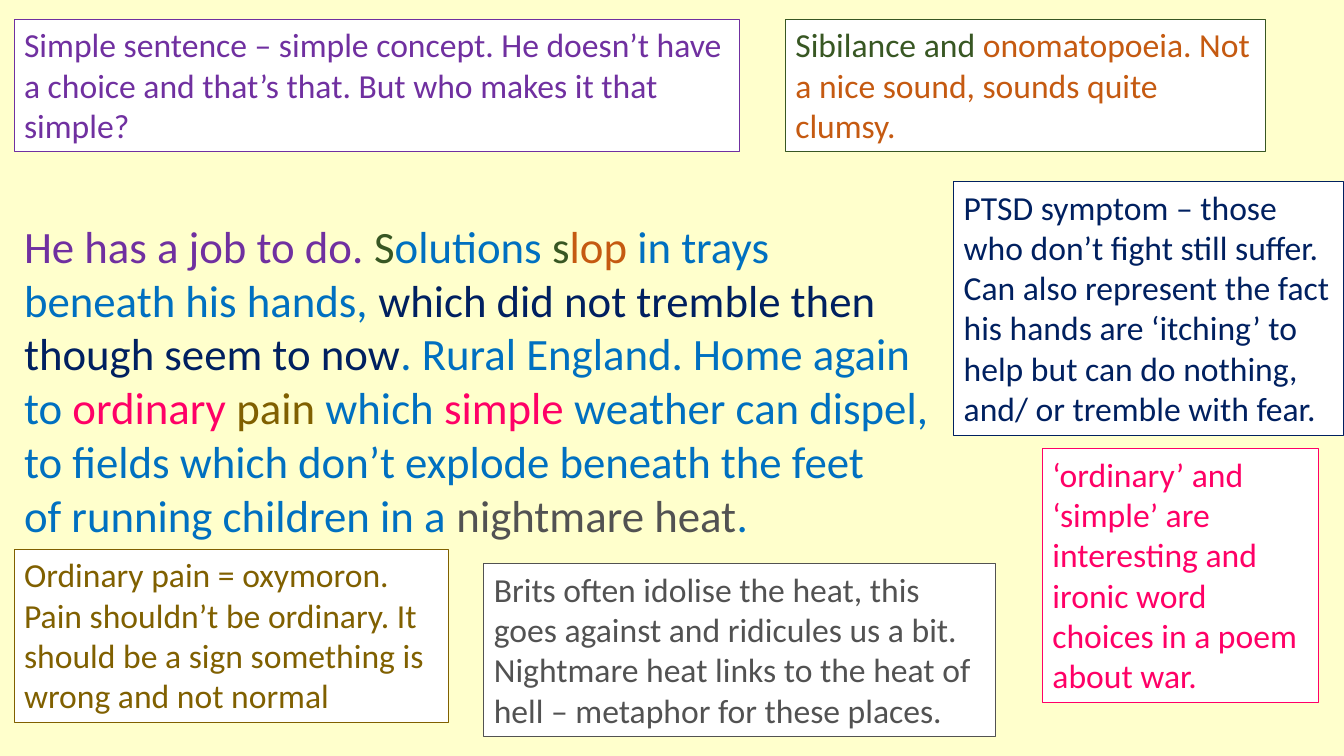
import pptx
import pptx.dml.color
import pptx.enum.shapes
import pptx.enum.text
import pptx.util

RGBColor = pptx.dml.color.RGBColor
CREAM = RGBColor(0xFF, 0xFF, 0xCC)
WHITE = RGBColor(0xFF, 0xFF, 0xFF)
PURPLE = RGBColor(0x70, 0x30, 0xA0)
GREEN = RGBColor(0x38, 0x57, 0x23)
BLUE = RGBColor(0x00, 0x70, 0xC0)
ORANGE = RGBColor(0xC5, 0x5A, 0x11)
NAVY = RGBColor(0x00, 0x20, 0x60)
PINK = RGBColor(0xFF, 0x00, 0x66)
OLIVE = RGBColor(0x80, 0x60, 0x00)
GREY = RGBColor(0x52, 0x52, 0x52)

POEM = [
    [("He has a job to do. ", PURPLE), ("S", GREEN), ("olutions ", BLUE),
     ("s", GREEN), ("lop", ORANGE), (" in trays", BLUE)],
    [("beneath his hands, ", BLUE), ("which did not tremble then", NAVY)],
    [("though seem to now", NAVY), (". Rural England. Home again", BLUE)],
    [("to ", BLUE), ("ordinary", PINK), (" pain ", OLIVE), ("which ", BLUE),
     ("simple", PINK), (" weather can dispel,", BLUE)],
    [("to fields which don’t explode beneath the feet", BLUE)],
    [("of running children in a ", BLUE), ("nightmare heat", GREY), (".", BLUE)],
]

NOTES = [
    ((14, 19, 719, 131),
     [("Simple sentence – simple concept. He doesn’t have a choice and "
       "that’s that. But who makes it that simple?", PURPLE)]),
    ((779, 19, 476, 131),
     [("Sibilance and ", GREEN),
      ("onomatopoeia. Not a nice sound, sounds quite clumsy.", ORANGE)]),
    ((946, 180, 387, 252),
     [("PTSD symptom – those who don’t fight still suffer. Can also represent "
       "the fact his hands are ‘itching’ to help but can do nothing, and/ or "
       "tremble with fear.", NAVY)]),
    ((14, 545, 431, 172),
     [("Ordinary pain = oxymoron. Pain shouldn’t be ordinary. It should be a "
       "sign something is wrong and not normal", OLIVE)]),
    ((1034, 445, 274, 252),
     [("‘ordinary’ and ‘simple’ are interesting and ironic word choices in a "
       "poem about war.", PINK)]),
    ((480, 559, 507, 172),
     [("Brits often idolise the heat, this goes against and ridicules us a "
       "bit. Nightmare heat links to the heat of hell – metaphor for these "
       "places.", GREY)]),
]


class Deck:
    """Hold the slide style and draw each kind of element."""

    PX = 9144
    FONT = "Calibri"
    FRAME = {
        "word_wrap": True,
        "auto_size": pptx.enum.text.MSO_AUTO_SIZE.SHAPE_TO_FIT_TEXT,
        "vertical_anchor": pptx.enum.text.MSO_ANCHOR.TOP,
    }

    def __init__(self, width, height):
        self.prs = pptx.Presentation()
        self.prs.slide_width, self.prs.slide_height = self.emu(width, height)
        self.s = self.prs.slides.add_slide(self.prs.slide_layouts[6])
        fill = self.s.background.fill
        fill.solid()
        fill.fore_color.rgb = CREAM

    def emu(self, *lengths):
        return [pptx.util.Emu(n * self.PX) for n in lengths]

    def set_text(self, sp, lines, size):
        tf = sp.text_frame
        for name, value in self.FRAME.items():
            setattr(tf, name, value)
        style = {"name": self.FONT, "size": pptx.util.Pt(size)}
        for i, line in enumerate(lines):
            p = tf.add_paragraph() if i else tf.paragraphs[0]
            p.alignment = pptx.enum.text.PP_ALIGN.LEFT
            for text, color in line:
                r = p.add_run()
                r.text = text
                for name, value in style.items():
                    setattr(r.font, name, value)
                r.font.color.rgb = color

    def text(self, box, lines, size):
        self.set_text(self.s.shapes.add_textbox(*self.emu(*box)), lines, size)

    def note(self, box, line, size=24):
        rect = pptx.enum.shapes.MSO_SHAPE.RECTANGLE
        sp = self.s.shapes.add_shape(rect, *self.emu(*box))
        sp.shadow.inherit = False
        sp.fill.solid()
        sp.fill.fore_color.rgb = WHITE
        sp.line.color.rgb = line[0][1]
        sp.line.width = pptx.util.Pt(0.75)
        self.set_text(sp, [line], size)


def main():
    deck = Deck(1333, 750)
    deck.text((14, 212, 941, 333), POEM, 32)
    for box, line in NOTES:
        deck.note(box, line)
    deck.prs.save("out.pptx")


if __name__ == "__main__":
    main()
